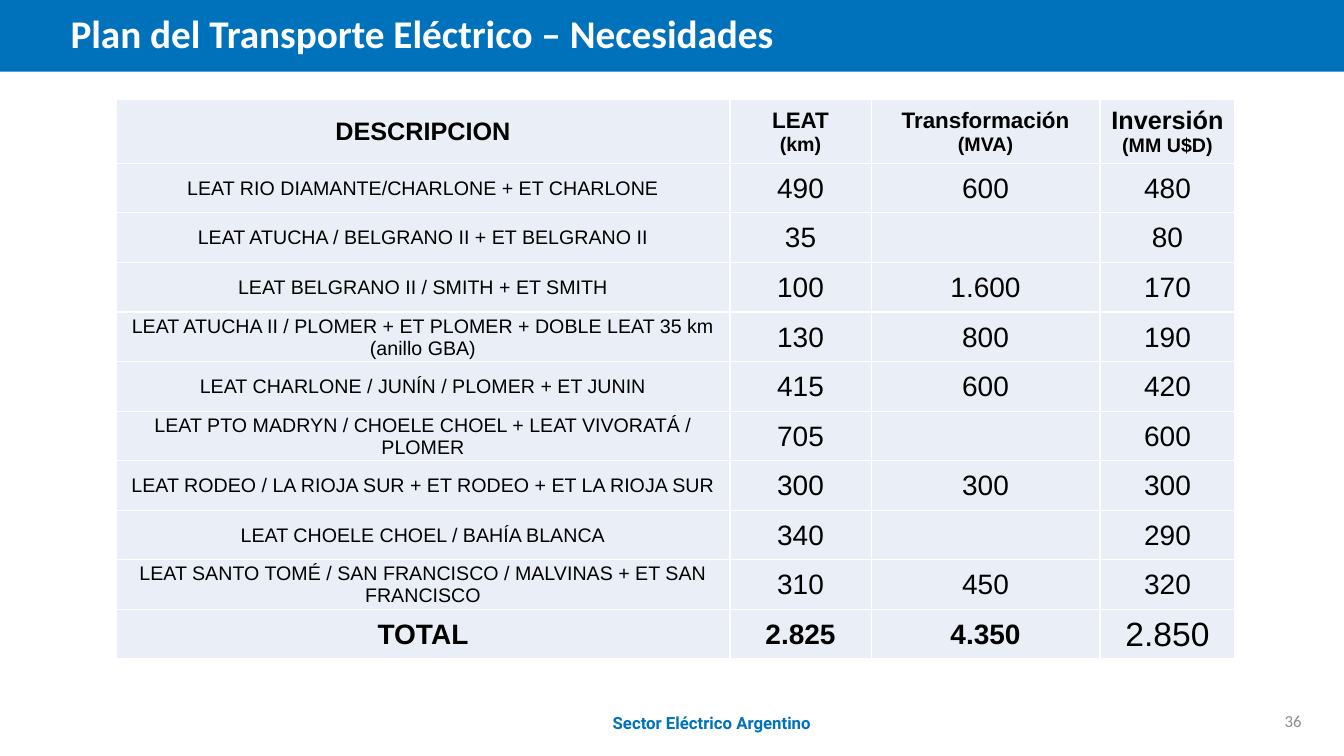
import pptx
import pptx.dml.color
import pptx.enum.shapes
import pptx.enum.text
import pptx.oxml
import pptx.oxml.ns
import pptx.util

Inches = pptx.util.Inches
RGBColor = pptx.dml.color.RGBColor
Align = pptx.enum.text.PP_ALIGN

BLUE = RGBColor(0x00, 0x72, 0xBC)
PALE = RGBColor(0xEA, 0xEF, 0xF7)
GRAY = RGBColor(0x8C, 0x8C, 0x8C)
BLACK = RGBColor(0, 0, 0)
WHITE = RGBColor(255, 255, 255)

COLUMN_WIDTHS = (6.09, 1.4, 2.27, 1.34)
TABLE_HEIGHT = 5.55
HEADER_HEIGHT = 0.63
HEADINGS = (
    (("DESCRIPCION", 18),),
    (("LEAT", 16), ("(km)", 14)),
    (("Transformación", 16), ("(MVA)", 14)),
    (("Inversión", 18), ("(MM U$D)", 14)),
)
PROJECTS = (
    ("LEAT RIO DIAMANTE/CHARLONE + ET CHARLONE", "490", "600", "480"),
    ("LEAT ATUCHA / BELGRANO II + ET BELGRANO II", "35", "", "80"),
    ("LEAT BELGRANO II / SMITH + ET SMITH", "100", "1.600", "170"),
    ("LEAT ATUCHA II / PLOMER + ET PLOMER + DOBLE LEAT 35 km (anillo GBA)", "130", "800", "190"),
    ("LEAT CHARLONE / JUNÍN / PLOMER + ET JUNIN", "415", "600", "420"),
    ("LEAT PTO MADRYN / CHOELE CHOEL + LEAT VIVORATÁ / PLOMER", "705", "", "600"),
    ("LEAT RODEO / LA RIOJA SUR + ET RODEO + ET LA RIOJA SUR", "300", "300", "300"),
    ("LEAT CHOELE CHOEL / BAHÍA BLANCA", "340", "", "290"),
    ("LEAT SANTO TOMÉ / SAN FRANCISCO / MALVINAS + ET SAN FRANCISCO", "310", "450", "320"),
)
TOTALS = (("TOTAL", 20, True), ("2.825", 20, True), ("4.350", 20, True), ("2.850", 24, False))


def set_all(target, values):
    for name, value in values.items():
        setattr(target, name, value)


class PlanSlide:
    def __init__(self, presentation):
        self.slide = presentation.slides.add_slide(presentation.slide_layouts[5])
        self.shapes = self.slide.shapes

    def add_lines(self, frame, lines, font, color, bold, align, spacing=None):
        for index, (text, size) in enumerate(lines):
            paragraph = frame.add_paragraph() if index else frame.paragraphs[0]
            set_all(paragraph, {"alignment": align, "line_spacing": spacing})
            run = paragraph.add_run()
            run.text = text
            set_all(run.font, {"name": font, "size": pptx.util.Pt(size), "bold": bold})
            run.font.color.rgb = color

    def prepare(self, frame):
        set_all(frame, {
            "word_wrap": True,
            "auto_size": pptx.enum.text.MSO_AUTO_SIZE.NONE,
            "vertical_anchor": pptx.enum.text.MSO_ANCHOR.MIDDLE,
        })

    def title(self, text, left, top, width, height):
        heading = self.shapes.title
        set_all(heading, {"left": Inches(left), "top": Inches(top),
                          "width": Inches(width), "height": Inches(height)})
        self.prepare(heading.text_frame)
        self.add_lines(heading.text_frame, [(text, 28)], "Calibri", WHITE, True, Align.LEFT, 0.9)

    def band(self, width, height):
        band = self.shapes.add_shape(
            pptx.enum.shapes.MSO_SHAPE.RECTANGLE, 0, 0, Inches(width), Inches(height))
        band.shadow.inherit = False
        band.fill.solid()
        band.fill.fore_color.rgb = BLUE
        band.line.fill.background()
        self.shapes.title.element.addprevious(band.element)

    def label(self, text, box, font, color, bold, align):
        frame = self.shapes.add_textbox(*map(Inches, box)).text_frame
        self.prepare(frame)
        self.add_lines(frame, [(text, 12)], font, color, bold, align)

    def cell(self, cell, lines, bold):
        set_all(cell, {
            "margin_left": Inches(0.01), "margin_right": Inches(0.01),
            "margin_top": Inches(0.01), "margin_bottom": 0,
            "vertical_anchor": pptx.enum.text.MSO_ANCHOR.MIDDLE,
        })
        properties = cell._tc.get_or_add_tcPr()
        for side in "LRTB":
            properties.append(pptx.oxml.parse_xml(
                f'<a:ln{side} {pptx.oxml.ns.nsdecls("a")} w="12700"><a:solidFill>'
                f'<a:srgbClr val="{WHITE}"/></a:solidFill></a:ln{side}>'))
        cell.fill.solid()
        cell.fill.fore_color.rgb = PALE
        if lines[0][0]:
            self.add_lines(cell.text_frame, lines, "Arial", BLACK, bold, Align.CENTER)

    def table(self, rows, left, top):
        table = self.shapes.add_table(
            len(rows), len(COLUMN_WIDTHS), Inches(left), Inches(top),
            Inches(sum(COLUMN_WIDTHS)), Inches(TABLE_HEIGHT)).table
        set_all(table, {"first_row": False, "horz_banding": False})
        for column, width in zip(table.columns, COLUMN_WIDTHS):
            column.width = Inches(width)
        body_height = (TABLE_HEIGHT - HEADER_HEIGHT) / (len(rows) - 1)
        for index, (row, contents) in enumerate(zip(table.rows, rows)):
            row.height = Inches(body_height if index else HEADER_HEIGHT)
            for cell, (lines, bold) in zip(row.cells, contents):
                self.cell(cell, lines, bold)


def main():
    presentation = pptx.Presentation()
    set_all(presentation, {"slide_width": Inches(13.33), "slide_height": Inches(7.5)})
    plan = PlanSlide(presentation)
    plan.band(13.33, 0.71)
    plan.title("Plan del Transporte Eléctrico – Necesidades", 0.6, 0, 9.53, 0.71)
    plan.label("36", (10.01, 6.95, 3, 0.4), "Calibri", GRAY, False, Align.RIGHT)
    rows = [[(lines, True) for lines in HEADINGS]]
    for description, *amounts in PROJECTS:
        rows.append([([(description, 14)], False)] + [([(amount, 20)], False) for amount in amounts])
    rows.append([([(text, size)], bold) for text, size, bold in TOTALS])
    plan.table(rows, 1.15, 0.99)
    plan.label("Sector Eléctrico Argentino", (3.44, 6.9, 7.24, 0.55), "Roboto", BLUE, True, Align.CENTER)
    presentation.save("out.pptx")


if __name__ == "__main__":
    main()
